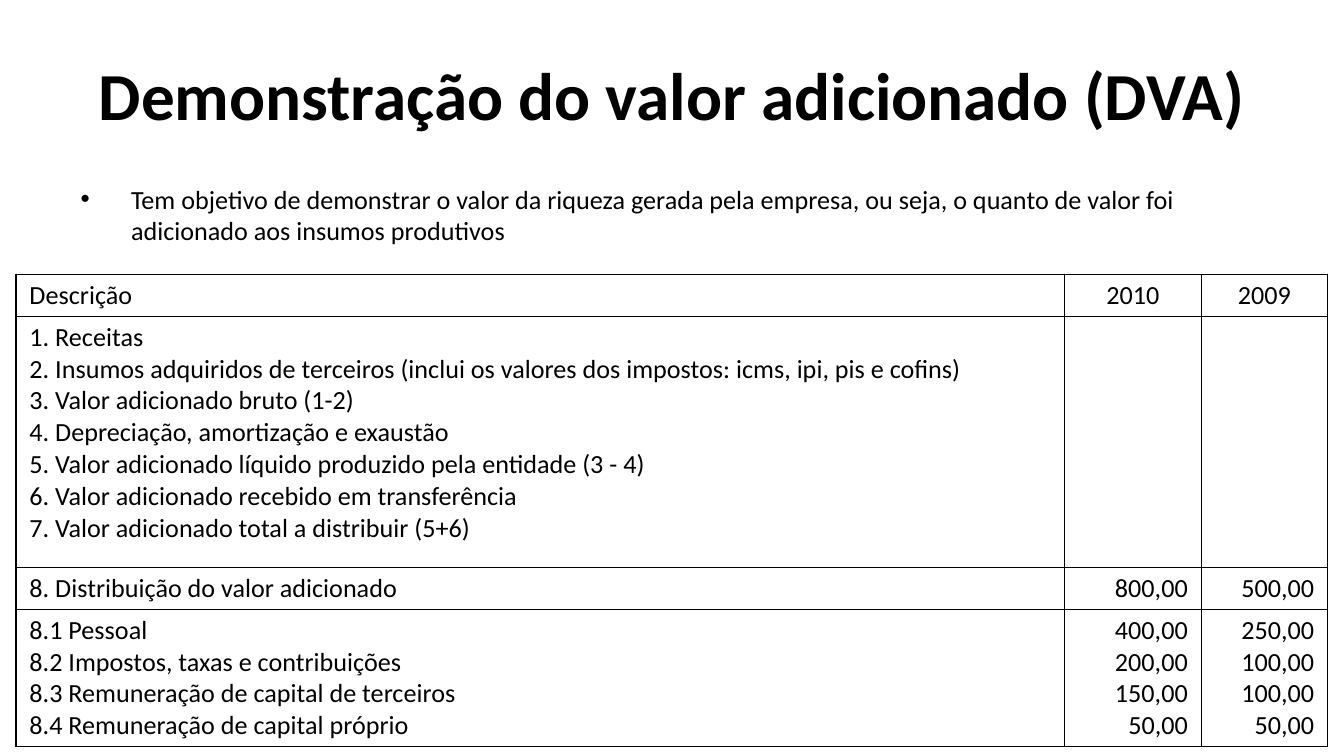
from dataclasses import dataclass

from lxml import etree
from pptx import Presentation
from pptx.dml.color import RGBColor
from pptx.enum import text
from pptx.oxml import ns
from pptx.util import Pt


@dataclass(frozen=True)
class Theme:
    font: str = "Calibri"
    ink: str = "000000"
    paper: str = "FFFFFF"
    title: int = 36
    body: int = 14
    border: int = 1


THEME = Theme()
LEFT, CENTER, RIGHT = text.PP_ALIGN.LEFT, text.PP_ALIGN.CENTER, text.PP_ALIGN.RIGHT

COLUMNS = [561.6, 73.4, 67.7]
ROW_HEIGHTS = [22.5, 134.5, 22.5, 73]
# Each cell holds a list of lines
ROWS = [
    [["Descrição"], ["2010"], ["2009"]],
    [["1. Receitas",
      "2. Insumos adquiridos de terceiros (inclui os valores dos impostos: icms, ipi, pis e cofins)",
      "3. Valor adicionado bruto (1-2)",
      "4. Depreciação, amortização e exaustão",
      "5. Valor adicionado líquido produzido pela entidade (3 - 4)",
      "6. Valor adicionado recebido em transferência",
      "7. Valor adicionado total a distribuir (5+6)"], [], []],
    [["8. Distribuição do valor adicionado"], ["800,00"], ["500,00"]],
    [["8.1 Pessoal",
      "8.2 Impostos, taxas e contribuições",
      "8.3 Remuneração de capital de terceiros",
      "8.4 Remuneração de capital próprio"],
     ["400,00", "200,00", "150,00", "50,00"],
     ["250,00", "100,00", "100,00", "50,00"]],
]


def write(tf, lines, size=THEME.body, bold=False, align=LEFT):
    """Write one paragraph per line in a text frame."""
    for i, line in enumerate(lines):
        p = tf.paragraphs[0] if i == 0 else tf.add_paragraph()
        p.alignment = align
        r = p.add_run()
        r.text = line
        r.font.name = THEME.font
        r.font.size = Pt(size)
        r.font.bold = bold
        r.font.color.rgb = RGBColor.from_string(THEME.ink)


def fill_placeholder(sp, box, content, anchor, **fmt):
    sp.left, sp.top, sp.width, sp.height = map(Pt, box)
    tf = sp.text_frame
    tf.word_wrap = True
    tf.auto_size = text.MSO_AUTO_SIZE.NONE
    tf.vertical_anchor = anchor
    write(tf, [content], **fmt)
    return tf


def set_borders(cell):
    tc_pr = cell._tc.get_or_add_tcPr()
    for side in ("a:lnL", "a:lnR", "a:lnT", "a:lnB"):
        ln = etree.SubElement(tc_pr, ns.qn(side), w=str(Pt(THEME.border)))
        fill = etree.SubElement(ln, ns.qn("a:solidFill"))
        etree.SubElement(fill, ns.qn("a:srgbClr"), val=THEME.ink)


def fill_cell(cell, lines, align):
    cell.margin_left = cell.margin_right = Pt(7.2)
    cell.margin_top = cell.margin_bottom = Pt(2.7)
    set_borders(cell)
    cell.fill.background()
    write(cell.text_frame, lines, align=align)


def add_statement(s, left, top):
    table = s.shapes.add_table(len(ROWS), len(COLUMNS), Pt(left), Pt(top),
                               Pt(sum(COLUMNS)), Pt(sum(ROW_HEIGHTS))).table
    table.first_row = table.horz_banding = False
    for column, width in zip(table.columns, COLUMNS):
        column.width = Pt(width)
    for row, height in zip(table.rows, ROW_HEIGHTS):
        row.height = Pt(height)
    for i, row in enumerate(ROWS):
        for j, lines in enumerate(row):
            align = LEFT if j == 0 else CENTER if i == 0 else RIGHT
            fill_cell(table.cell(i, j), lines, align)


def main():
    prs = Presentation()
    prs.slide_width, prs.slide_height = Pt(720), Pt(405)
    s = prs.slides.add_slide(prs.slide_layouts[1])
    s.background.fill.solid()
    s.background.fill.fore_color.rgb = RGBColor.from_string(THEME.paper)

    # Title
    fill_placeholder(s.shapes.title, (36, 16.5, 648, 67.5),
                     "Demonstração do valor adicionado (DVA)",
                     text.MSO_ANCHOR.MIDDLE, size=THEME.title, bold=True, align=CENTER)

    # Purpose of the statement, with the template's bullet
    tf = fill_placeholder(
        s.placeholders[1], (36, 94.5, 648, 34.5),
        "Tem objetivo de demonstrar o valor da riqueza gerada pela empresa, "
        "ou seja, o quanto de valor foi adicionado aos insumos produtivos",
        text.MSO_ANCHOR.TOP)
    p_pr = tf.paragraphs[0]._p.get_or_add_pPr()
    p_pr.set("marL", str(Pt(27)))
    p_pr.set("indent", str(Pt(-27)))

    # Value added statement
    add_statement(s, 8.6, 147)
    prs.save("out.pptx")


if __name__ == "__main__":
    main()
